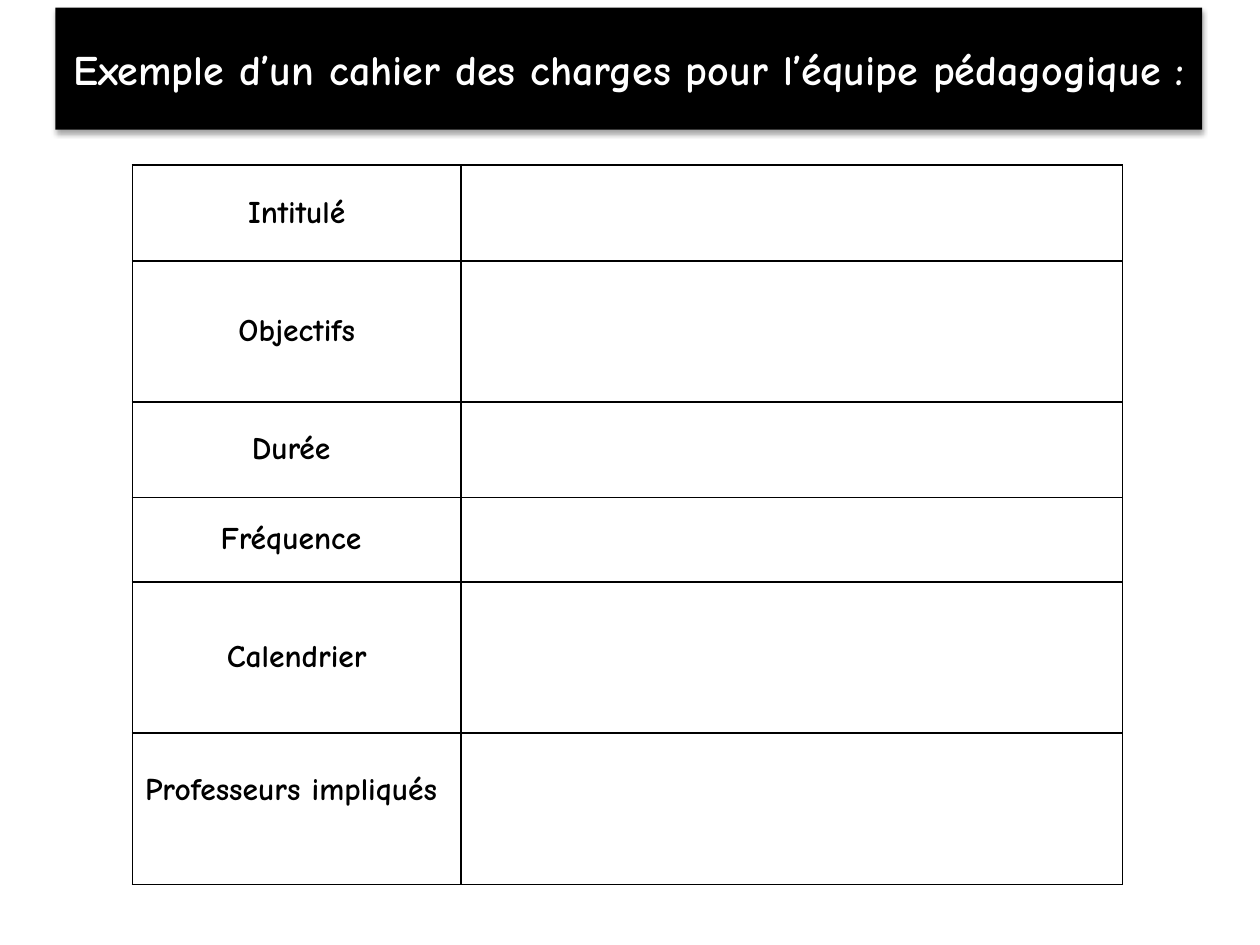
import pptx
import pptx.dml.color
import pptx.enum.text
import pptx.oxml
import pptx.oxml.ns
import pptx.util
from pptx.util import Inches

BLACK = pptx.dml.color.RGBColor(0x00, 0x00, 0x00)
WHITE = pptx.dml.color.RGBColor(0xFF, 0xFF, 0xFF)
FONT = "Comic Neue"
NS = pptx.oxml.ns.nsdecls("a")

HEADING = "Exemple d’un cahier des charges pour l’équipe pédagogique : "
# Label and row height in inches
SECTIONS = [
    ("Intitulé", 0.76),
    ("Objectifs", 1.12),
    ("Durée ", 0.76),
    ("Fréquence ", 0.67),
    ("Calendrier", 1.2),
    ("Professeurs impliqués ", 1.2),
]
LABEL_SHARE = 0.332


def write_centred(text_frame, text, size, color):
    paragraph = text_frame.paragraphs[0]
    paragraph.alignment = pptx.enum.text.PP_ALIGN.CENTER
    run = paragraph.add_run()
    run.text = text
    run.font.name = FONT
    run.font.size = pptx.util.Pt(size)
    run.font.bold = True
    run.font.color.rgb = color


def add_soft_shadow(shape):
    shape.shadow.inherit = False
    effects = shape._element.spPr.find(pptx.oxml.ns.qn("a:effectLst"))
    blur, distance = pptx.util.Pt(3.1), pptx.util.Pt(1.8)
    effects.append(pptx.oxml.parse_xml(
        f'<a:outerShdw {NS} blurRad="{blur}" dist="{distance}" dir="5400000" rotWithShape="0">'
        '<a:srgbClr val="000000"><a:alpha val="35000"/></a:srgbClr></a:outerShdw>'))


def place_heading(slide, left, top, width, height):
    banner = slide.shapes.title
    banner.left, banner.top, banner.width, banner.height = left, top, width, height
    banner.fill.solid()
    banner.fill.fore_color.rgb = BLACK
    banner.line.fill.background()
    add_soft_shadow(banner)
    frame = banner.text_frame
    frame.word_wrap = True
    frame.auto_size = pptx.enum.text.MSO_AUTO_SIZE.NONE
    frame.vertical_anchor = pptx.enum.text.MSO_ANCHOR.MIDDLE
    write_centred(frame, HEADING, 24, WHITE)


def format_cell(cell):
    cell.vertical_anchor = pptx.enum.text.MSO_ANCHOR.MIDDLE
    # Borders come before the fill in the cell properties
    properties = cell._tc.get_or_add_tcPr()
    for side in ("lnL", "lnR", "lnT", "lnB"):
        properties.append(pptx.oxml.parse_xml(
            f'<a:{side} {NS} w="{pptx.util.Pt(1)}"><a:solidFill>'
            f'<a:srgbClr val="{BLACK}"/></a:solidFill></a:{side}>'))
    cell.fill.solid()
    cell.fill.fore_color.rgb = WHITE


def place_specification(slide, left, top, width, height):
    specification = slide.shapes.add_table(
        len(SECTIONS), 2, left, top, width, height).table
    specification.first_row = False
    specification.horz_banding = False
    label_width = int(width * LABEL_SHARE)
    specification.columns[0].width = label_width
    specification.columns[1].width = width - label_width

    for row_index, (label, row_height) in enumerate(SECTIONS):
        specification.rows[row_index].height = Inches(row_height)
        for cell in specification.rows[row_index].cells:
            format_cell(cell)
        write_centred(specification.cell(row_index, 0).text_frame, label, 18, BLACK)

    # The last label sits above the middle of its row
    specification.cell(len(SECTIONS) - 1, 0).margin_bottom = Inches(0.34)


def main():
    presentation = pptx.Presentation()
    presentation.slide_width = Inches(10)
    presentation.slide_height = Inches(7.5)
    slide = presentation.slides.add_slide(presentation.slide_layouts[5])
    place_heading(slide, Inches(0.44), Inches(0.06), Inches(9.1), Inches(0.97))
    place_specification(slide, Inches(1.05), Inches(1.31), Inches(7.86), Inches(5.71))
    presentation.save("out.pptx")


if __name__ == "__main__":
    main()
